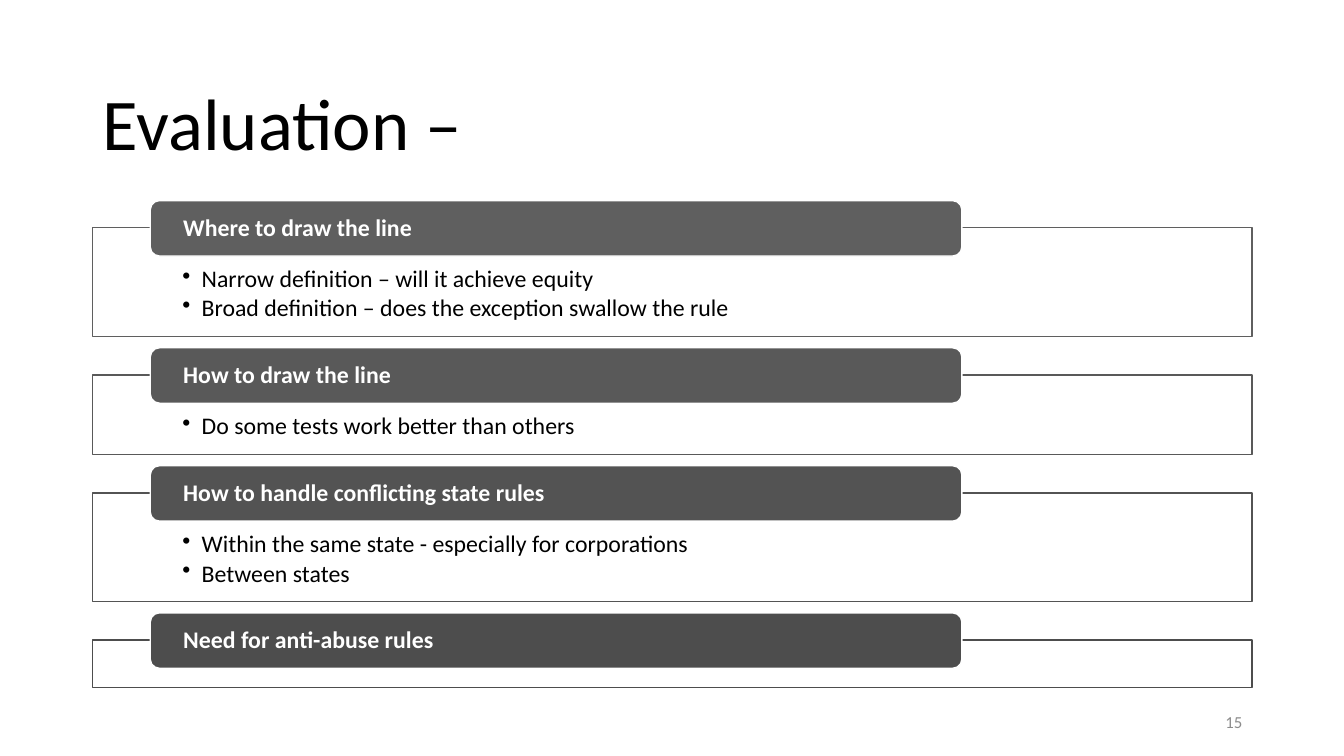
"""Build the "Evaluation" slide: four titled boxes stacked down the page."""
from lxml import etree
from pptx import Presentation
from pptx.dml.color import RGBColor
from pptx.enum.shapes import MSO_SHAPE
from pptx.enum.text import MSO_ANCHOR, PP_ALIGN
from pptx.oxml.ns import qn
from pptx.util import Inches, Pt

RECT, ROUNDED = MSO_SHAPE.RECTANGLE, MSO_SHAPE.ROUNDED_RECTANGLE
TOP, MIDDLE = MSO_ANCHOR.TOP, MSO_ANCHOR.MIDDLE
LEFT, RIGHT = PP_ALIGN.LEFT, PP_ALIGN.RIGHT
BLACK = RGBColor(0x00, 0x00, 0x00)
WHITE = RGBColor(0xFF, 0xFF, 0xFF)
GRAY = RGBColor(0x8C, 0x8C, 0x8C)

MARGIN, WIDTH = 0.92, 11.5
FIRST_TOP, GAP = 2.26, 0.38
BOX_HEIGHTS = [0.47, 0.79, 1.08]
TAB_INDENT, TAB_RISE, TAB_WIDTH, TAB_HEIGHT = 0.57, 0.27, 8.05, 0.55

SECTIONS = [
    ("Where to draw the line", RGBColor(0x5F, 0x5F, 0x5F),
     ["Narrow definition – will it achieve equity",
      "Broad definition – does the exception swallow the rule"]),
    ("How to draw the line", RGBColor(0x59, 0x59, 0x59),
     ["Do some tests work better than others"]),
    ("How to handle conflicting state rules", RGBColor(0x53, 0x53, 0x53),
     ["Within the same state - especially for corporations",
      "Between states"]),
    ("Need for anti-abuse rules", RGBColor(0x4D, 0x4D, 0x4D), []),
]


def write(sp, lines, size, color, anchor=MIDDLE, align=LEFT,
          insets=(0.1, 0.05), bold=False, bullet=False):
    """Fill a shape with one paragraph per line."""
    tf = sp.text_frame
    tf.word_wrap = True
    tf.vertical_anchor = anchor
    tf.margin_left = tf.margin_right = Inches(insets[0])
    tf.margin_top, tf.margin_bottom = Inches(insets[1]), 0
    for i, line in enumerate(lines):
        p = tf.paragraphs[0] if i == 0 else tf.add_paragraph()
        p.text = line
        p.alignment = align
        p.line_spacing = 0.9
        p.font.name = "Calibri"
        p.font.size = Pt(size)
        p.font.bold = bold
        p.font.color.rgb = color
        if bullet:
            p.space_after = Pt(2.5)
            pPr = p._p.get_or_add_pPr()
            pPr.set("marL", str(Inches(0.19)))
            pPr.set("indent", str(Inches(-0.19)))
            bu = etree.Element(qn("a:buChar"), char="•")
            pPr.insert_element_before(bu, "a:tabLst", "a:defRPr", "a:extLst")


def panel(kind, left, top, width, height, fill, line):
    """Add a flat shape with a thin outline."""
    sp = s.shapes.add_shape(kind, Inches(left), Inches(top), Inches(width), Inches(height))
    sp.shadow.inherit = False
    sp.fill.solid()
    sp.fill.fore_color.rgb = fill
    sp.line.color.rgb = line
    sp.line.width = Pt(1)
    return sp


prs = Presentation()
prs.slide_width, prs.slide_height = Inches(13.33), Inches(7.5)
s = prs.slides.add_slide(prs.slide_layouts[6])

title = s.shapes.add_textbox(Inches(MARGIN), Inches(0.61), Inches(WIDTH), Inches(1.24))
write(title, ["Evaluation –"], 52, BLACK)

number = s.shapes.add_textbox(Inches(9.42), Inches(6.95), Inches(3), Inches(0.4))
write(number, ["15"], 12, GRAY, align=RIGHT)

top = FIRST_TOP
for heading, shade, points in SECTIONS:
    height = BOX_HEIGHTS[len(points)]
    box = panel(RECT, MARGIN, top, WIDTH, height, WHITE, shade)
    write(box, points, 17, BLACK, anchor=TOP, insets=(0.89, 0.39), bullet=True)
    tab = panel(ROUNDED, MARGIN + TAB_INDENT, top - TAB_RISE, TAB_WIDTH, TAB_HEIGHT,
                shade, WHITE)
    write(tab, [heading], 17, WHITE, insets=(0.3, 0), bold=True)
    top += height + GAP

prs.save("out.pptx")
